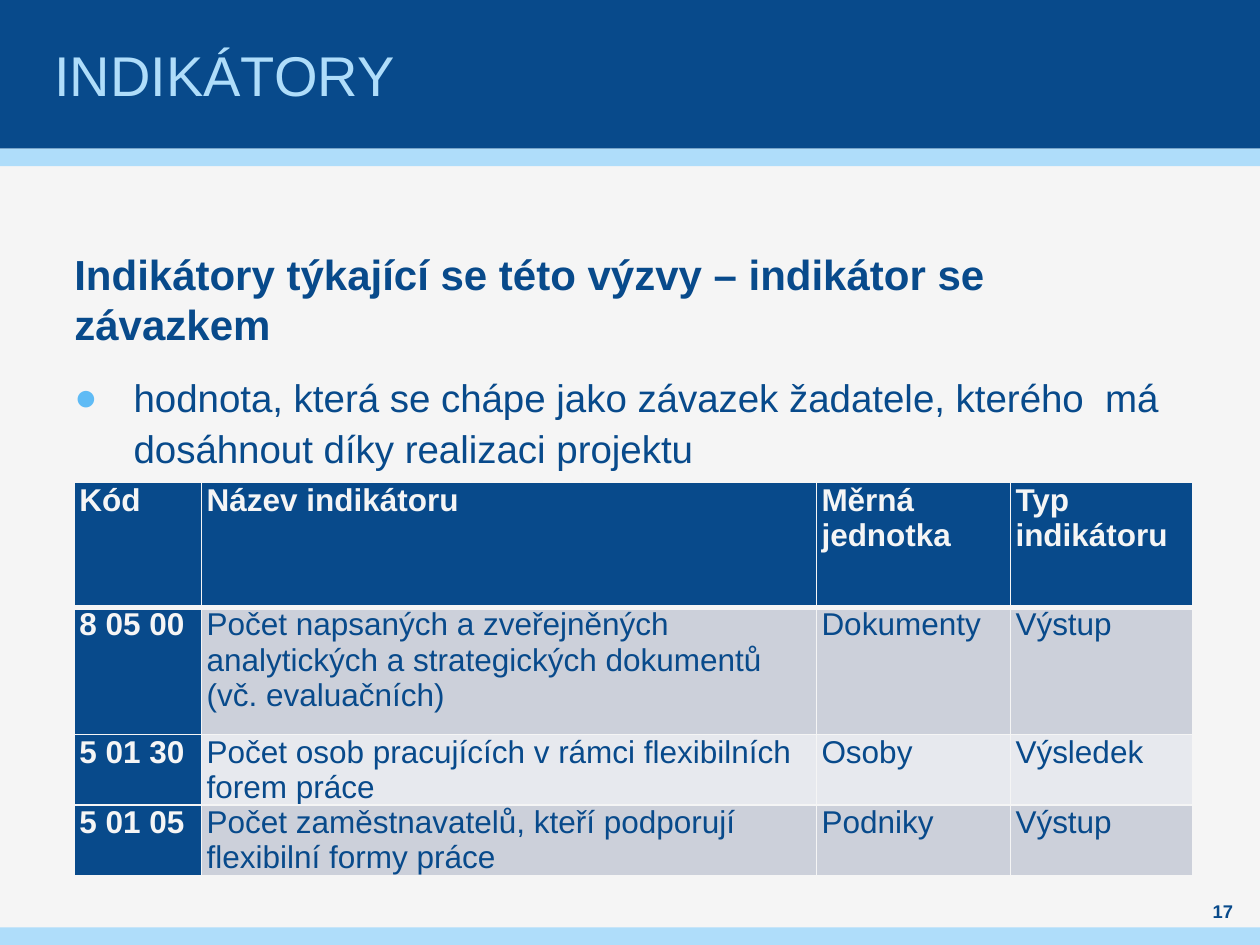
from typing import NamedTuple

from lxml import etree
from pptx import Presentation
from pptx import util as u
from pptx.dml.color import RGBColor
from pptx.enum import shapes, text
from pptx.oxml.ns import qn

NAVY, SKY, PAPER = "084A8B", "AFDDFA", "F5F5F5"
BULLET, BAND_DARK, BAND_LIGHT = "5FBBF5", "CCD0DA", "E7E9EE"


class Band(NamedTuple):
    top: float
    height: float
    color: str


class Indicator(NamedTuple):
    code: str
    name: str
    unit: str
    kind: str


BANDS = [Band(1.18, 0.14, SKY), Band(0, 1.18, NAVY), Band(7.36, 0.14, SKY)]
HEADER = Indicator("Kód", "Název indikátoru", "Měrná jednotka", "Typ indikátoru")
INDICATORS = [
    Indicator("8 05 00", "Počet napsaných a zveřejněných analytických a "
              "strategických dokumentů (vč. evaluačních)", "Dokumenty", "Výstup"),
    Indicator("5 01 30", "Počet osob pracujících v rámci flexibilních forem práce",
              "Osoby", "Výsledek"),
    Indicator("5 01 05", "Počet zaměstnavatelů, kteří podporují flexibilní formy práce",
              "Podniky", "Výstup"),
]
COLUMN_WIDTHS = [1.01, 4.88, 1.54, 1.45]
ROW_HEIGHTS = [0.99, 1.01, 0.56, 0.56]


def rgb(color: str) -> RGBColor:
    return RGBColor.from_string(color)


def fill(target, color: str) -> None:
    target.fill.solid()
    target.fill.fore_color.rgb = rgb(color)


def place(shape, left: float, top: float, width: float, height: float) -> None:
    shape.left, shape.top = u.Inches(left), u.Inches(top)
    shape.width, shape.height = u.Inches(width), u.Inches(height)


def set_frame(frame, anchor, side: float = 0) -> None:
    frame.word_wrap = True
    frame.auto_size = text.MSO_AUTO_SIZE.NONE
    frame.vertical_anchor = anchor
    frame.margin_left = frame.margin_right = u.Inches(side)
    frame.margin_top = frame.margin_bottom = 0


def style(paragraph, size: float, color: str, bold: bool = False, space: float = 0) -> None:
    paragraph.space_before = paragraph.space_after = u.Pt(space)
    for run in paragraph.runs:
        run.font.name, run.font.size, run.font.bold = "Arial", u.Pt(size), bold
        run.font.color.rgb = rgb(color)


def indent(paragraph, left: float, first: float = 0) -> None:
    props = paragraph._p.get_or_add_pPr()
    props.set("marL", str(u.Inches(left)))
    props.set("indent", str(u.Inches(first)))


def set_bullet(paragraph, mark: str = "") -> None:
    """Give the paragraph a coloured bullet, or none when mark is empty."""
    props = paragraph._p.get_or_add_pPr()
    if not mark:
        etree.SubElement(props, qn("a:buNone"))
        return
    tint = etree.SubElement(props, qn("a:buClr"))
    etree.SubElement(tint, qn("a:srgbClr"), val=BULLET)
    etree.SubElement(props, qn("a:buChar"), char=mark)


def set_borders(cell, bottom: float, top: float) -> None:
    props = cell._tc.get_or_add_tcPr()
    for side, width in (("L", 1), ("R", 1), ("T", top), ("B", bottom)):
        line = etree.SubElement(props, qn(f"a:ln{side}"), w=str(u.Pt(width)))
        solid = etree.SubElement(line, qn("a:solidFill"))
        etree.SubElement(solid, qn("a:srgbClr"), val=PAPER)


def draw_band(slide, band: Band) -> None:
    bar = slide.shapes.add_shape(shapes.MSO_SHAPE.RECTANGLE, 0, u.Inches(band.top),
                                 u.Inches(10), u.Inches(band.height))
    bar.shadow.inherit = False
    fill(bar, band.color)
    bar.line.fill.background()
    # bands lie behind the placeholders
    slide.shapes._spTree.remove(bar._element)
    slide.shapes._spTree.insert(2, bar._element)


def draw_cell(cell, words: str, row: int, column: int) -> None:
    is_label = row == 0 or column == 0
    set_borders(cell, bottom=3 if row == 0 else 1, top=3 if row == 1 else 1)
    fill(cell, NAVY if is_label else BAND_DARK if row % 2 else BAND_LIGHT)
    cell.margin_left = cell.margin_right = cell.margin_top = cell.margin_bottom = 0
    paragraph = cell.text_frame.paragraphs[0]
    paragraph.text = words
    indent(paragraph, 0.04)
    style(paragraph, 18, PAPER if is_label else NAVY, is_label, space=3)


def draw_indicators(slide) -> None:
    rows = [HEADER, *INDICATORS]
    table = slide.shapes.add_table(
        len(rows), len(COLUMN_WIDTHS), u.Inches(0.59), u.Inches(3.83),
        u.Inches(sum(COLUMN_WIDTHS)), u.Inches(sum(ROW_HEIGHTS))).table
    for column, width in zip(table.columns, COLUMN_WIDTHS):
        column.width = u.Inches(width)
    for row, height in zip(table.rows, ROW_HEIGHTS):
        row.height = u.Inches(height)
    for r, indicator in enumerate(rows):
        for c, words in enumerate(indicator):
            draw_cell(table.cell(r, c), words, r, c)


def fill_title(title) -> None:
    place(title, 0.39, 0, 9.21, 1.18)
    set_frame(title.text_frame, text.MSO_ANCHOR.MIDDLE, side=0.04)
    title.text_frame.text = "INDIKÁTORY"
    heading = title.text_frame.paragraphs[0]
    heading.alignment = text.PP_ALIGN.LEFT
    style(heading, 32, SKY)


def fill_body(body) -> None:
    place(body, 0.59, 1.97, 8.82, 4.72)
    set_frame(body.text_frame, text.MSO_ANCHOR.TOP)
    intro = body.text_frame.paragraphs[0]
    intro.text = "Indikátory týkající se této výzvy – indikátor se závazkem"
    commitment = body.text_frame.add_paragraph()
    commitment.text = ("hodnota, která se chápe jako závazek žadatele, kterého  má "
                       "dosáhnout díky realizaci projektu")
    for paragraph in (intro, commitment):
        paragraph.line_spacing = u.Pt(28.8)
    style(intro, 24, NAVY, bold=True, space=6)
    style(commitment, 22, NAVY, space=6)
    indent(intro, 0)
    indent(commitment, 0.47, -0.47)
    set_bullet(intro)
    set_bullet(commitment, "●")


def draw_page_number(slide) -> None:
    number = slide.shapes.add_textbox(0, 0, 0, 0)
    place(number, 9.45, 7.13, 0.51, 0.2)
    set_frame(number.text_frame, text.MSO_ANCHOR.MIDDLE)
    number.text_frame.text = "17"
    paragraph = number.text_frame.paragraphs[0]
    paragraph.alignment = text.PP_ALIGN.CENTER
    style(paragraph, 10.5, NAVY, bold=True)


def main() -> None:
    deck = Presentation()
    deck.slide_width, deck.slide_height = u.Inches(10), u.Inches(7.5)
    slide = deck.slides.add_slide(deck.slide_layouts[1])
    fill(slide.background, PAPER)
    for band in BANDS:
        draw_band(slide, band)
    fill_title(slide.shapes.title)
    fill_body(slide.placeholders[1])
    draw_page_number(slide)
    draw_indicators(slide)
    deck.save("out.pptx")


if __name__ == "__main__":
    main()
